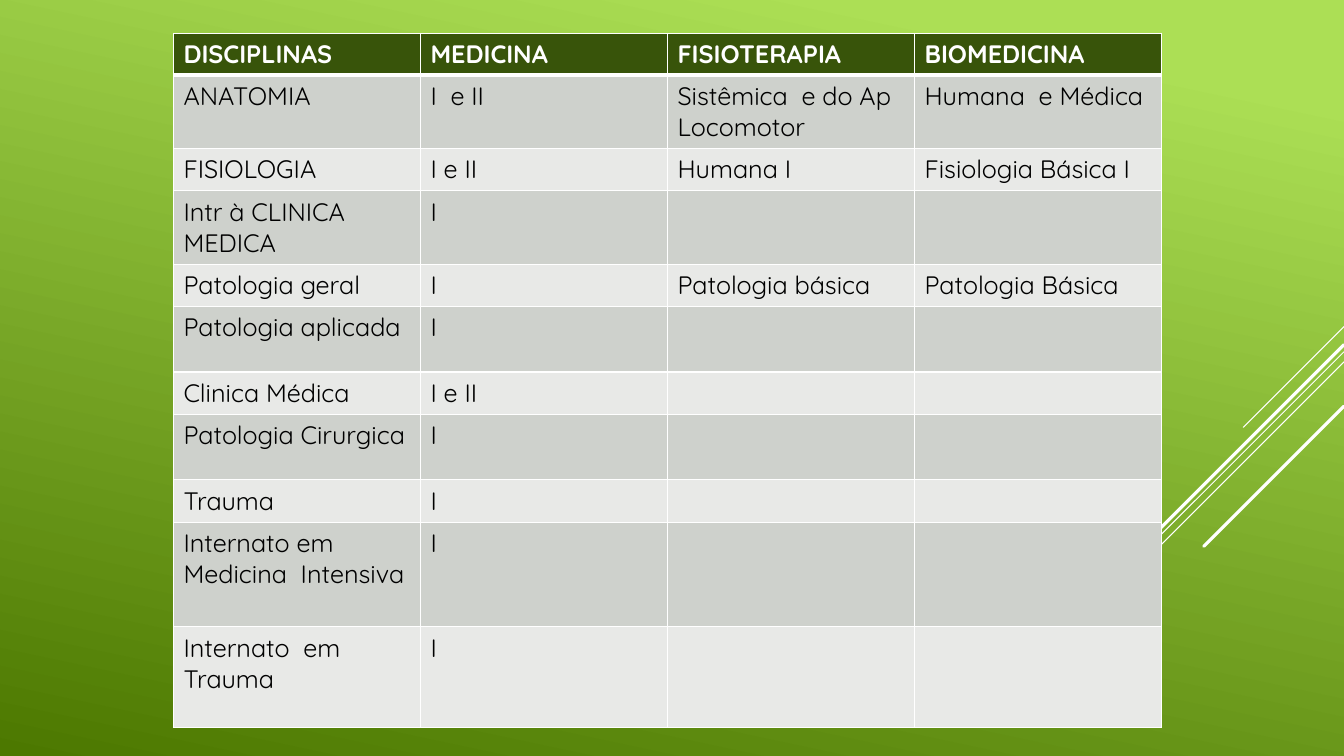
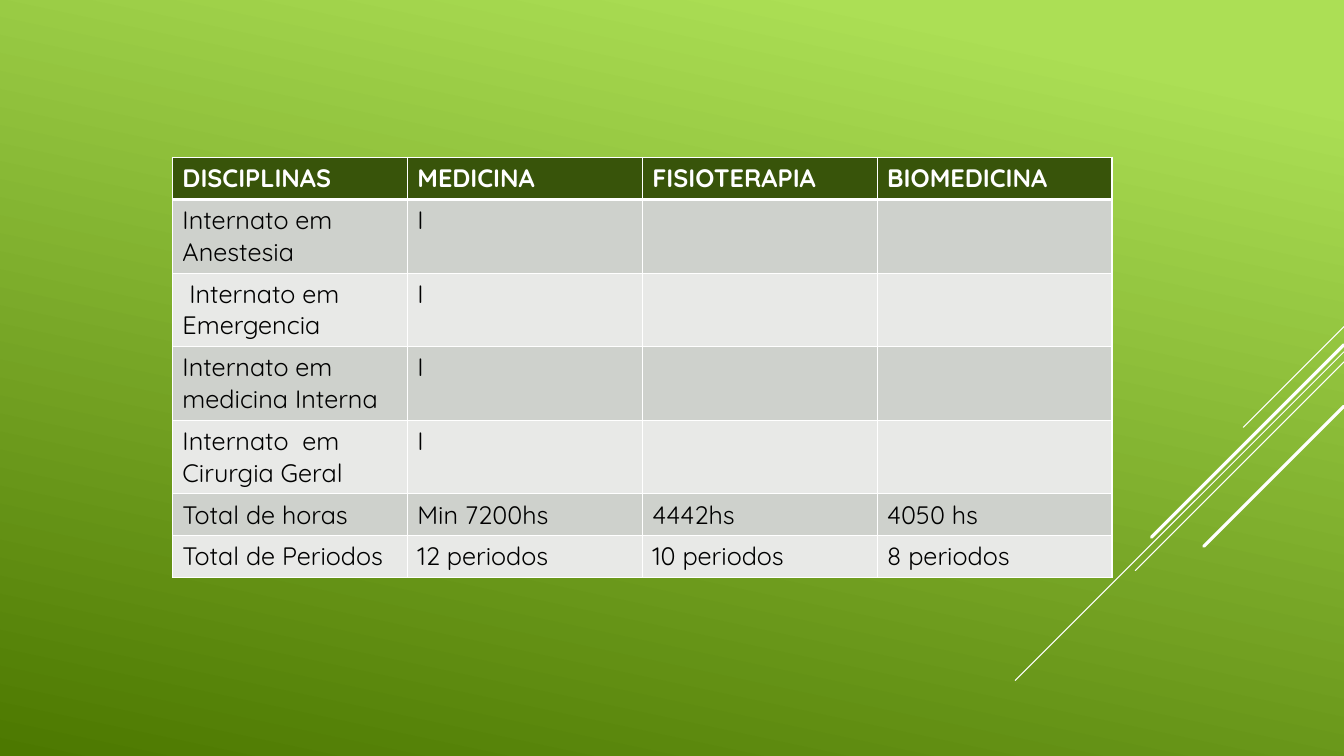
from dataclasses import dataclass

from lxml.etree import SubElement
from pptx import Presentation
from pptx.dml.color import RGBColor
from pptx.enum.shapes import MSO_CONNECTOR
from pptx.oxml.ns import qn
from pptx.slide import Slide
from pptx.table import _Cell
from pptx.util import Inches, Pt

FONT = "Quicksand"
COLORS = {
    "light": "ACDF55",
    "deep": "4C7800",
    "head": "38540A",
    "odd": "CED1CC",
    "even": "E8E9E7",
    "white": "FFFFFF",
    "black": "000000",
}
HEADS = ("DISCIPLINAS", "MEDICINA", "FISIOTERAPIA", "BIOMEDICINA")


@dataclass(frozen=True)
class Streak:
    """A diagonal falling from the right edge at 45 degrees."""
    top: float
    reach: float
    width: float


@dataclass(frozen=True)
class Row:
    height: float
    texts: tuple[str, ...]


@dataclass(frozen=True)
class Grid:
    left: float
    top: float
    column: float
    rows: tuple[Row, ...]


STREAKS = (
    Streak(3.24, 1.00, 0.75),
    Streak(3.49, 3.26, 0.75),
    Streak(3.59, 2.07, 0.75),
    Streak(3.42, 1.91, 2.25),
    Streak(4.03, 1.39, 2.25),
)

GRIDS = (
    Grid(1.72, 0.33, 2.45, (
        Row(0.41, HEADS),
        Row(0.73, ("ANATOMIA", "I  e II", "Sistêmica  e do Ap Locomotor",
                   "Humana  e Médica")),
        Row(0.42, ("FISIOLOGIA", "I e II", "Humana I", "Fisiologia Básica I")),
        Row(0.72, ("Intr à CLINICA MEDICA", "I")),
        Row(0.42, ("Patologia geral", "I", "Patologia básica",
                   "Patologia Básica")),
        Row(0.65, ("Patologia aplicada", "I")),
        Row(0.42, ("Clinica Médica", "I e II")),
        Row(0.65, ("Patologia Cirurgica", "I")),
        Row(0.42, ("Trauma", "I")),
        Row(1.04, ("Internato em Medicina  Intensiva", "I")),
        Row(1.00, ("Internato  em Trauma", "I")),
    )),
    Grid(1.71, 1.56, 2.33, (
        Row(0.42, HEADS),
        Row(0.73, ("Internato em Anestesia", "I")),
        Row(0.73, (" Internato em Emergencia", "I")),
        Row(0.73, ("Internato em medicina Interna", "I")),
        Row(0.73, ("Internato  em Cirurgia Geral", "I")),
        Row(0.41, ("Total de horas", "Min 7200hs", "4442hs", "4050 hs")),
        Row(0.41, ("Total de Periodos", "12 periodos", "10 periodos",
                   "8 periodos")),
    )),
)


def tone(name: str) -> RGBColor:
    return RGBColor.from_string(COLORS[name])


def paint_back(deck) -> None:
    """Give the master the green gradient that all slides inherit."""
    fill = deck.slide_master.background.fill
    fill.gradient()
    fill.gradient_angle = 360 - 102
    for stop, name, place in zip(fill.gradient_stops, ("light", "deep"), (0.1, 1)):
        stop.color.rgb = tone(name)
        stop.position = place


def draw_streak(slide: Slide, streak: Streak) -> None:
    edge = 13.33
    line = slide.shapes.add_connector(
        MSO_CONNECTOR.STRAIGHT, Inches(edge), Inches(streak.top),
        Inches(edge - streak.reach), Inches(streak.top + streak.reach))
    line.line.color.rgb = tone("white")
    line.line.width = Pt(streak.width)
    props = line._element.spPr
    props.find(qn("a:ln")).set("cap", "rnd")
    SubElement(props, qn("a:effectLst"))


def frame_cell(cell: _Cell, index: int) -> None:
    """Draw white borders, thick between the header and the body."""
    props = cell._tc.get_or_add_tcPr()
    widths = {"L": 1, "R": 1, "T": 3 if index == 1 else 1,
              "B": 3 if index == 0 else 1}
    for side, width in widths.items():
        line = SubElement(props, qn(f"a:ln{side}"), w=str(Pt(width)))
        fill = SubElement(line, qn("a:solidFill"))
        SubElement(fill, qn("a:srgbClr"), val=COLORS["white"])


def fill_cell(cell: _Cell, text: str, index: int) -> None:
    header = index == 0
    frame_cell(cell, index)
    cell.fill.solid()
    cell.fill.fore_color.rgb = tone(
        "head" if header else "odd" if index % 2 else "even")
    cell.text_frame.text = text
    for run in cell.text_frame.paragraphs[0].runs:
        run.font.name = FONT
        run.font.size = Pt(18)
        run.font.bold = header
        run.font.color.rgb = tone("white" if header else "black")


def draw_grid(slide: Slide, grid: Grid) -> None:
    count = len(HEADS)
    table = slide.shapes.add_table(
        len(grid.rows), count, Inches(grid.left), Inches(grid.top),
        Inches(grid.column * count),
        Inches(sum(row.height for row in grid.rows))).table
    for column in table.columns:
        column.width = Inches(grid.column)
    for index, row in enumerate(grid.rows):
        table.rows[index].height = Inches(row.height)
        for place in range(count):
            text = row.texts[place] if place < len(row.texts) else ""
            fill_cell(table.cell(index, place), text, index)


def main() -> None:
    deck = Presentation()
    deck.slide_width = Inches(13.33)
    deck.slide_height = Inches(7.5)
    paint_back(deck)
    for grid in GRIDS:
        slide = deck.slides.add_slide(deck.slide_layouts[6])
        for streak in STREAKS:
            draw_streak(slide, streak)
        draw_grid(slide, grid)
    deck.save("out.pptx")


if __name__ == "__main__":
    main()
